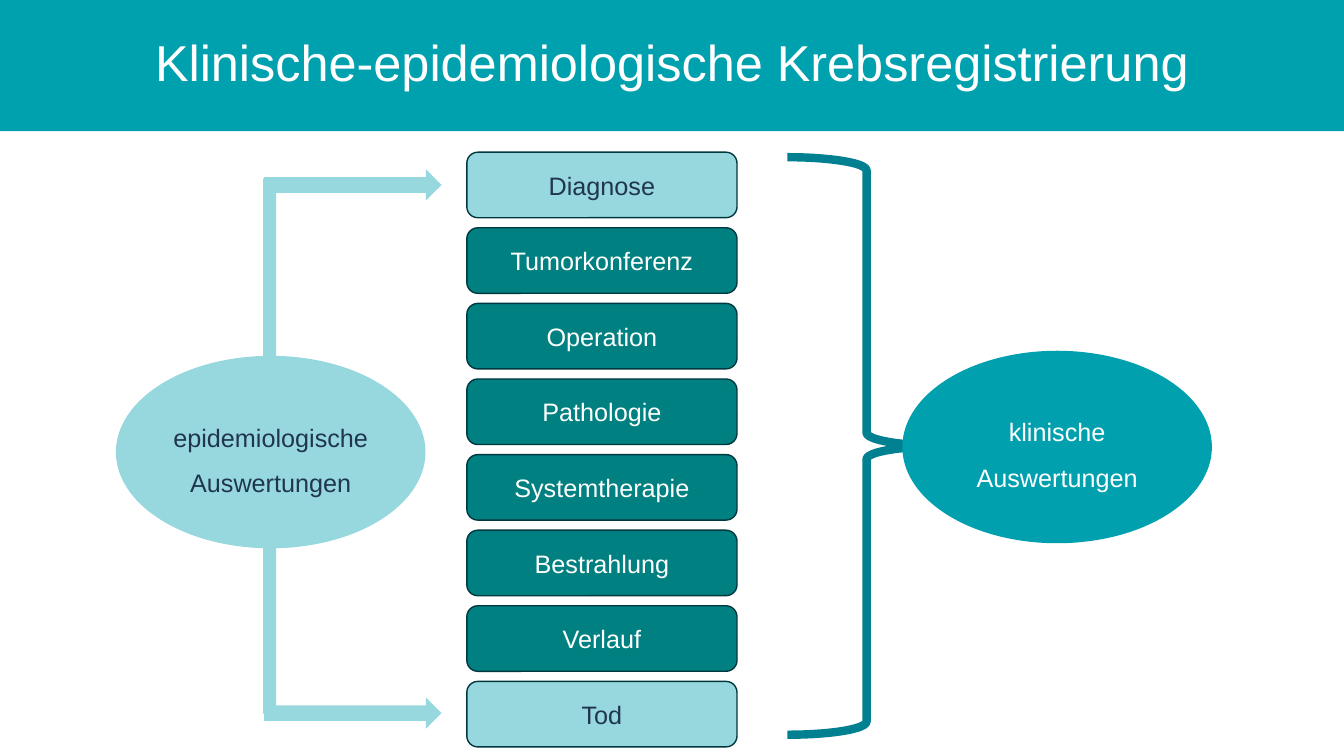
from pptx import Presentation
from pptx.dml.color import RGBColor
from pptx.enum.shapes import MSO_SHAPE as Preset
from pptx.enum.text import MSO_ANCHOR as Anchor, MSO_AUTO_SIZE as AutoSize, PP_ALIGN as Align
from pptx.util import Emu, Pt

EMU_PER_PX = 9144  # 100 px to the inch
WIDTH, HEIGHT = 1333, 750

WHITE, NAVY = "FFFFFF", "20364C"
LIGHT, TEAL, DARK_TEAL = "97D8DF", "00A1AF", "008080"
BRACE_TEAL, OUTLINE = "008090", "00383F"

STAGES = ["Diagnose", "Tumorkonferenz", "Operation", "Pathologie",
          "Systemtherapie", "Bestrahlung", "Verlauf", "Tod"]
EPIDEMIOLOGICAL_STAGES = {"Diagnose", "Tod"}
STAGE_LEFT, STAGE_TOP, STAGE_STEP = 463, 151, 75
STAGE_SIZE = (268, 65)
OVAL_SIZE = (307, 191)


def px(value):
    return Emu(value * EMU_PER_PX)


def color(hex_string):
    return RGBColor.from_string(hex_string)


def write_text(shape, text, size=18, ink=WHITE, font="Arial", spacing=1.0):
    """Fill the shape with centred text, one paragraph per line."""
    frame = shape.text_frame
    frame.word_wrap = True
    frame.auto_size = AutoSize.NONE
    frame.vertical_anchor = Anchor.MIDDLE
    frame.margin_left = frame.margin_right = 0
    frame.text = text
    for paragraph in frame.paragraphs:
        paragraph.alignment = Align.CENTER
        paragraph.line_spacing = spacing
        paragraph.font.name = font
        paragraph.font.size = Pt(size)
        paragraph.font.color.rgb = color(ink)


class SlideBuilder:
    """Draws elements in the slide's style; boxes are left, top, width, height in px."""

    def __init__(self, presentation):
        self.slide = presentation.slides.add_slide(presentation.slide_layouts[5])

    def title(self, text, box):
        shape = self.slide.shapes.title
        shape.left, shape.top, shape.width, shape.height = map(px, box)
        shape.fill.solid()
        shape.fill.fore_color.rgb = color(TEAL)
        write_text(shape, text, size=36, spacing=0.9)

    def shape(self, preset, box, fill=None, line=None, line_width=1):
        shape = self.slide.shapes.add_shape(preset, *map(px, box))
        shape.shadow.inherit = False
        if fill:
            shape.fill.solid()
            shape.fill.fore_color.rgb = color(fill)
        else:
            shape.fill.background()
        if line:
            shape.line.color.rgb = color(line)
            shape.line.width = Pt(line_width)
        else:
            shape.line.fill.background()
        return shape

    def stage(self, index, name):
        light = name in EPIDEMIOLOGICAL_STAGES
        box = (STAGE_LEFT, STAGE_TOP + index * STAGE_STEP, *STAGE_SIZE)
        shape = self.shape(Preset.ROUNDED_RECTANGLE, box, LIGHT if light else DARK_TEAL, OUTLINE)
        write_text(shape, name, ink=NAVY if light else WHITE)

    def branch(self, bar_top, arrow_top):
        """Draw a vertical bar and the arrow that leads from it to a stage."""
        self.shape(Preset.RIGHT_ARROW, (262, arrow_top, 176, 31), LIGHT)
        self.shape(Preset.RECTANGLE, (261, bar_top, 13, 191), LIGHT)

    def brace(self, box):
        self.shape(Preset.RIGHT_BRACE, box, line=BRACE_TEAL, line_width=6)

    def oval(self, text, left, top, fill, ink):
        shape = self.shape(Preset.OVAL, (left, top, *OVAL_SIZE), fill)
        write_text(shape, text, ink=ink, spacing=1.5)


def main():
    presentation = Presentation()
    presentation.slide_width, presentation.slide_height = px(WIDTH), px(HEIGHT)
    builder = SlideBuilder(presentation)
    builder.title("Klinische-epidemiologische Krebsregistrierung", (0, 0, WIDTH, 130))
    for index, name in enumerate(STAGES):
        builder.stage(index, name)
    builder.brace((781, 156, 157, 573))
    builder.branch(bar_top=177, arrow_top=168)
    builder.branch(bar_top=517, arrow_top=692)
    builder.oval("epidemiologische\nAuswertungen", 115, 353, LIGHT, NAVY)
    builder.oval("klinische\nAuswertungen", 895, 348, "00A0AE", WHITE)
    presentation.save("out.pptx")


if __name__ == "__main__":
    main()
